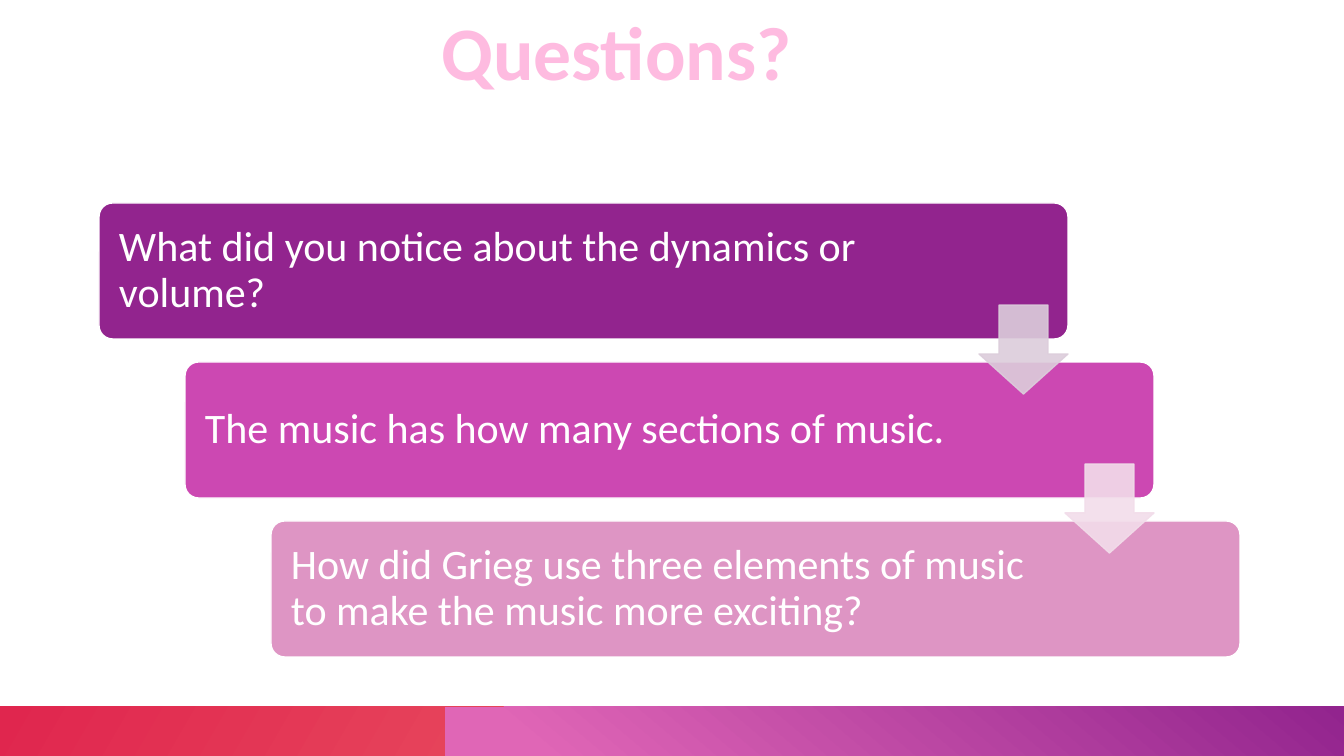
from pptx import Presentation
from pptx import util as u
from pptx.dml.color import RGBColor
from pptx.enum import shapes, text
from pptx.oxml.ns import qn
from lxml import etree

SLIDE_WIDTH, SLIDE_HEIGHT = 1344, 756
SCALE = 12192000 / SLIDE_WIDTH
FONT = "Calibri"
COLORS = {
    "white": "FFFFFF",
    "title": "FEBBE0",
    "orange": "F0726F",
    "red": "E0264E",
    "pink": "E066B6",
    "purple": "92248E",
    "magenta": "CC48B2",
    "rose": "DE95C4",
    "first arrow": "DCCDDB",
    "second arrow": "F2DDEA",
}
QUESTIONS = [
    ("What did you notice about the dynamics or volume?", "purple"),
    ("The music has how many sections of music.", "magenta"),
    ("How did Grieg use three elements of music to make the music more exciting?", "rose"),
]
ARROWS = ["first arrow", "second arrow"]
STEP_X, STEP_Y = 86, 159


def px(length):
    return u.Emu(round(length * SCALE))


def color(name):
    return RGBColor.from_string(COLORS[name])


def add_shape(slide, kind, left, top, width, height):
    shape = slide.shapes.add_shape(kind, px(left), px(top), px(width), px(height))
    shape.shadow.inherit = False
    return shape


def paint(shape, fill, line):
    shape.fill.solid()
    shape.fill.fore_color.rgb = color(fill)
    shape.line.color.rgb = color(line)
    shape.line.width = u.Pt(1)


def add_title(slide, words):
    title = slide.shapes.title
    title.left, title.top, title.width, title.height = px(412), px(0), px(409), px(102)
    frame = title.text_frame
    frame.text = words
    frame.word_wrap = False
    frame.auto_size = text.MSO_AUTO_SIZE.NONE
    frame.vertical_anchor = text.MSO_ANCHOR.TOP
    paragraph = frame.paragraphs[0]
    paragraph.alignment = text.PP_ALIGN.CENTER
    paragraph.font.name = FONT
    paragraph.font.size = u.Pt(54)
    paragraph.font.bold = True
    paragraph.font.color.rgb = color("title")


def add_footer_bar(slide, left, start, end, angle):
    top = 707
    bar = add_shape(slide, shapes.MSO_SHAPE.RECTANGLE, left, top,
                    SLIDE_WIDTH - left, SLIDE_HEIGHT - top)
    bar.line.fill.background()
    bar.fill.gradient()
    bar.fill.gradient_angle = angle
    for stop, name, position in zip(bar.fill.gradient_stops, (start, end), (0.1, 1)):
        stop.color.rgb = color(name)
        stop.position = position


def add_question(slide, index, words, fill):
    card = add_shape(slide, shapes.MSO_SHAPE.ROUNDED_RECTANGLE,
                     99 + index * STEP_X, 203 + index * STEP_Y, 969, 136)
    card.adjustments[0] = 0.1
    paint(card, fill, "white")
    frame = card.text_frame
    frame.text = words
    frame.word_wrap = True
    frame.vertical_anchor = text.MSO_ANCHOR.MIDDLE
    frame.margin_left, frame.margin_right = px(16), px(191)
    paragraph = frame.paragraphs[0]
    paragraph.alignment = text.PP_ALIGN.LEFT
    paragraph.line_spacing = 0.9
    paragraph.font.name = FONT
    paragraph.font.size = u.Pt(30)
    paragraph.font.color.rgb = color("white")


def add_arrow(slide, index, fill):
    arrow = add_shape(slide, shapes.MSO_SHAPE.DOWN_ARROW,
                      979 + index * STEP_X, 305 + index * STEP_Y, 89, 89)
    arrow.adjustments[0] = 0.55
    arrow.adjustments[1] = 0.45
    paint(arrow, fill, fill)
    for element in arrow._element.spPr.iter(qn("a:srgbClr")):
        etree.SubElement(element, qn("a:alpha"), val="90000")


def main():
    presentation = Presentation()
    presentation.slide_width = px(SLIDE_WIDTH)
    presentation.slide_height = px(SLIDE_HEIGHT)
    slide = presentation.slides.add_slide(presentation.slide_layouts[5])
    add_footer_bar(slide, 0, "orange", "red", 150)
    add_footer_bar(slide, 445, "pink", "purple", 50)
    for index, (words, fill) in enumerate(QUESTIONS):
        add_question(slide, index, words, fill)
    for index, fill in enumerate(ARROWS):
        add_arrow(slide, index, fill)
    add_title(slide, "Questions?")
    presentation.save("out.pptx")


if __name__ == "__main__":
    main()
